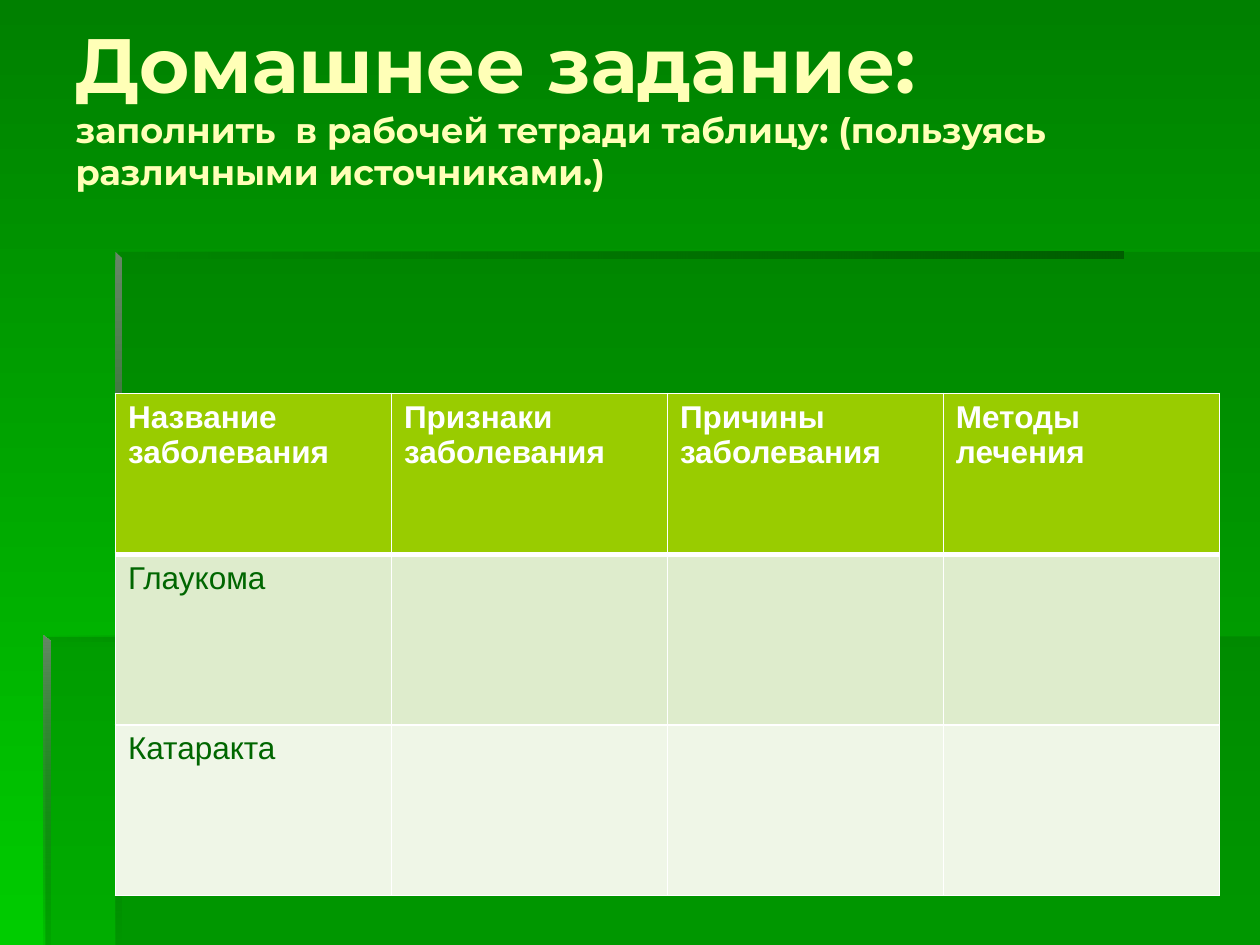
from typing import NamedTuple

from lxml.etree import SubElement
from pptx import Presentation
from pptx.dml.color import RGBColor
from pptx.dml.fill import FillFormat
from pptx.enum.text import MSO_ANCHOR, MSO_AUTO_SIZE
from pptx.oxml.ns import qn
from pptx.util import Pt

COLORS = {
    "bg_top": "008000", "bg_bottom": "00CC00",
    "dark": "006600", "darker": "005E00", "light": "668666",
    "title": "FFFFB7", "white": "FFFFFF",
    "header": "99CC00", "band_1": "DEECCC", "band_2": "EFF6E7",
}
DOWN, RIGHT = 270, 0


class Stop(NamedTuple):
    color: str
    alpha: int = 100


class Panel(NamedTuple):
    points: list[tuple[float, float]]
    stops: list[Stop]
    angle: int = RIGHT


def rgb(name: str) -> RGBColor:
    return RGBColor.from_string(COLORS[name])


def set_alpha(node, percent: int) -> None:
    """Add opacity to the colour found under a fill element."""
    if percent < 100:
        color = next(node.iter(qn("a:srgbClr")))
        SubElement(color, qn("a:alpha"), val=str(percent * 1000))


def set_gradient(fill: FillFormat, stops: list[Stop], angle: int) -> None:
    fill.gradient()
    fill.gradient_angle = angle
    for target, stop in zip(fill.gradient_stops, stops):
        target.color.rgb = rgb(stop.color)
    return None


def draw_panel(s, panel: Panel) -> None:
    start, *rest = [(Pt(x), Pt(y)) for x, y in panel.points]
    builder = s.shapes.build_freeform(*start, scale=1.0)
    builder.add_line_segments(rest, close=True)
    sp = builder.convert_to_shape()
    sp.shadow.inherit = False
    sp.line.fill.background()
    if len(panel.stops) == 1:
        sp.fill.solid()
        sp.fill.fore_color.rgb = rgb(panel.stops[0].color)
        nodes = [sp.element.spPr.find(qn("a:solidFill"))]
    else:
        set_gradient(sp.fill, panel.stops, panel.angle)
        nodes = sp.element.spPr.findall(f".//{qn('a:gs')}")
    for node, stop in zip(nodes, panel.stops):
        set_alpha(node, stop.alpha)


def box(x: float, y: float, w: float, h: float) -> list[tuple[float, float]]:
    return [(x, y), (x, y + h), (x + w, y + h), (x + w, y)]


def mitred_bar(x: float, y: float, h: float) -> list[tuple[float, float]]:
    """Vertical bar whose top is cut at a slant."""
    return [(x, y), (x, y + h), (x + 3.6, y + h), (x + 3.6, y + 3.3)]


def set_borders(cell, bottom: float, top: float) -> None:
    props = cell._tc.get_or_add_tcPr()
    for side, width in (("L", 1), ("R", 1), ("T", top), ("B", bottom)):
        ln = SubElement(props, qn(f"a:ln{side}"), w=str(Pt(width)))
        fill = SubElement(ln, qn("a:solidFill"))
        SubElement(fill, qn("a:srgbClr"), val=COLORS["white"])


def draw_title(s) -> None:
    title = s.shapes.title
    title.left, title.top, title.width, title.height = Pt(36), Pt(39.6), Pt(660), Pt(140.4)
    s.shapes.element.append(title.element)
    tf = title.text_frame
    tf.auto_size = MSO_AUTO_SIZE.NONE
    tf.word_wrap = True
    tf.vertical_anchor = MSO_ANCHOR.BOTTOM
    tf.margin_bottom = Pt(70)
    p = tf.paragraphs[0]
    p.alignment = 1
    p.font.name, p.font.bold = "Montserrat", True
    p.font.color.rgb = rgb("title")
    r = p.add_run()
    r.text, r.font.size = "Домашнее задание:", Pt(44)
    p.add_line_break()
    r = p.add_run()
    r.text = "заполнить  в рабочей тетради таблицу: (пользуясь различными источниками.)"
    r.font.size = Pt(20)


def draw_table(s) -> None:
    rows = [
        ["Название заболевания", "Признаки заболевания", "Причины заболевания", "Методы лечения"],
        ["Глаукома", "", "", ""],
        ["Катаракта", "", "", ""],
    ]
    heights = [92, 97.4, 97.4]
    fills = ["header", "band_1", "band_2"]
    table = s.shapes.add_table(3, 4, Pt(66), Pt(224.8), Pt(630.8), Pt(sum(heights))).table
    table.horz_banding = False
    for i, (texts, height, fill) in enumerate(zip(rows, heights, fills)):
        table.rows[i].height = Pt(height)
        for j, text in enumerate(texts):
            cell = table.cell(i, j)
            set_borders(cell, bottom=3 if i == 0 else 1, top=3 if i == 1 else 1)
            cell.fill.solid()
            cell.fill.fore_color.rgb = rgb(fill)
            cell.text = text
            font = cell.text_frame.paragraphs[0].font
            font.name, font.size, font.bold = "Arial", Pt(18), i == 0
            font.color.rgb = rgb("white" if i == 0 else "dark")


def main() -> None:
    prs = Presentation()
    prs.slide_width, prs.slide_height = Pt(720), Pt(540)
    s = prs.slides.add_slide(prs.slide_layouts[5])
    set_gradient(s.background.fill, [Stop("bg_top"), Stop("bg_bottom")], DOWN)

    veil = [Stop("dark", 30)]
    fade_in = [Stop("dark", 0), Stop("darker")]
    corner = [(67.5, 364), (26, 364), (26, 540), (720, 540), (720, 144), (67.5, 144)]
    panels = [
        Panel(box(66, 363.6, 654, 176.4), veil),
        Panel(corner, veil),
        Panel(box(66, 144, 576, 3.8), fade_in),
        Panel(mitred_bar(66, 144, 223), [Stop("light"), Stop("dark")], DOWN),
        Panel(mitred_bar(65.8, 363, 177), [Stop("light"), Stop("dark", 0)], DOWN),
        Panel(box(25, 363, 360, 3.6), fade_in),
        Panel(mitred_bar(25, 363, 177), [Stop("light"), Stop("dark", 10)], DOWN),
    ]
    for panel in panels:
        draw_panel(s, panel)
    draw_title(s)
    draw_table(s)
    prs.save("out.pptx")


if __name__ == "__main__":
    main()
